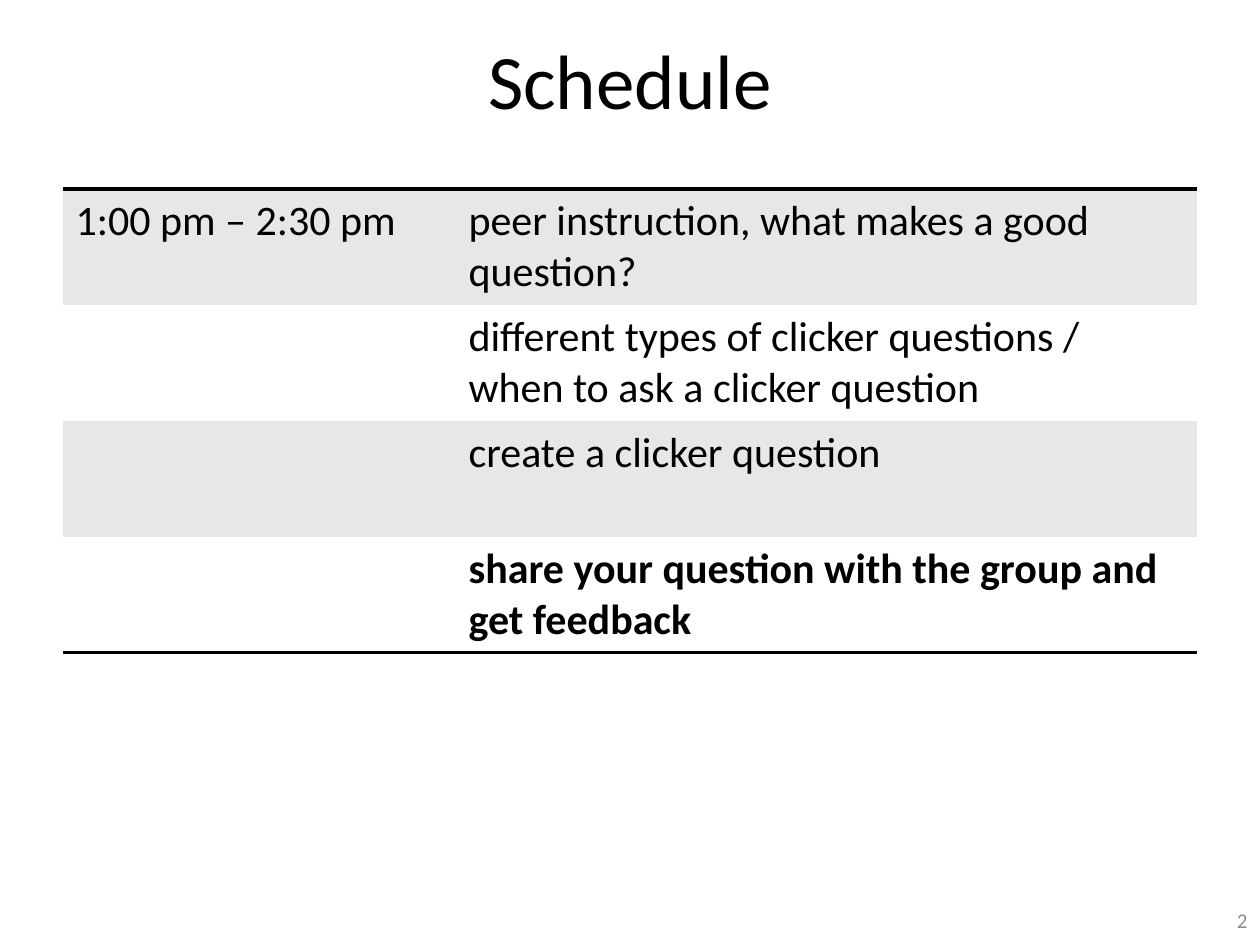
from dataclasses import dataclass

from lxml.etree import SubElement
from pptx import Presentation
from pptx.dml.color import RGBColor
from pptx.enum.text import MSO_ANCHOR, PP_ALIGN
from pptx.oxml import parse_xml
from pptx.oxml.ns import qn
from pptx.util import Emu, Pt

PIXELS_PER_INCH = 126
FONT = "Calibri"
BLACK, GRAY, BAND, WHITE = "000000", "8C8C8C", "E7E7E7", "FFFFFF"
NO_STYLE = "{2D5ABB26-0587-4C30-8999-92F81FD0307C}"
COLUMN_WIDTHS = (393, 741)
ROW_HEIGHT = 116


@dataclass(frozen=True)
class Session:
    """One row of the schedule."""

    time: str
    activity: str
    bold: bool = False


SESSIONS = (
    Session("1:00 pm – 2:30 pm", "peer instruction, what makes a good question?"),
    Session("", "different types of clicker questions /\vwhen to ask a clicker question"),
    Session("", "create a clicker question"),
    Session("", "share your question with the group and get feedback", bold=True),
)


def px(length: int) -> Emu:
    """Turn pixels into EMU."""
    return Emu(round(length * 914400 / PIXELS_PER_INCH))


def color(value: str) -> RGBColor:
    """Turn a hex string into a colour."""
    return RGBColor.from_string(value)


def write_text(frame, text: str, *, size: int, fill: str = BLACK, bold: bool = False,
               align=PP_ALIGN.LEFT, anchor=MSO_ANCHOR.TOP) -> None:
    """Write one formatted paragraph into a text frame."""
    frame.word_wrap = True
    frame.vertical_anchor = anchor
    paragraph = frame.paragraphs[0]
    paragraph.text = text
    paragraph.alignment = align
    for run in paragraph.runs:
        run.font.name = FONT
        run.font.size = Pt(size)
        run.font.bold = bold
        run.font.color.rgb = color(fill)


def add_rule(cell, side: str) -> None:
    """Draw a black border on the given side of a cell."""
    namespace = "http://schemas.openxmlformats.org/drawingml/2006/main"
    line = parse_xml(f'<a:{side} xmlns:a="{namespace}" w="{Pt(2)}"/>')
    fill = SubElement(line, qn("a:solidFill"))
    SubElement(fill, qn("a:srgbClr"), val=BLACK)
    cell._tc.get_or_add_tcPr().insert(0, line)


def add_title(slide, text: str) -> None:
    """Place the slide title."""
    title = slide.shapes.title
    title.left, title.top, title.width, title.height = px(63), px(0), px(1134), px(158)
    write_text(title.text_frame, text, size=44, align=PP_ALIGN.CENTER,
               anchor=MSO_ANCHOR.MIDDLE)


def add_schedule(slide, sessions: tuple[Session, ...]) -> None:
    """Add the banded schedule table, ruled above and below."""
    table = slide.shapes.add_table(
        len(sessions), len(COLUMN_WIDTHS), px(63), px(189),
        px(sum(COLUMN_WIDTHS)), px(ROW_HEIGHT * len(sessions))).table
    table.first_row = table.horz_banding = False
    table._tbl.tblPr.find(qn("a:tableStyleId")).text = NO_STYLE
    for column, width in zip(table.columns, COLUMN_WIDTHS):
        column.width = px(width)
    for index, session in enumerate(sessions):
        table.rows[index].height = px(ROW_HEIGHT)
        for cell, text in zip(table.rows[index].cells, (session.time, session.activity)):
            cell.fill.solid()
            cell.fill.fore_color.rgb = color(WHITE if index % 2 else BAND)
            write_text(cell.text_frame, text, size=24, bold=session.bold)
            if index == 0:
                add_rule(cell, "lnT")
            if index == len(sessions) - 1:
                add_rule(cell, "lnB")


def add_page_number(slide, number: int) -> None:
    """Add the page number at the bottom right."""
    box = slide.shapes.add_textbox(px(966), px(895), px(294), px(50))
    write_text(box.text_frame, str(number), size=12, fill=GRAY,
               align=PP_ALIGN.RIGHT, anchor=MSO_ANCHOR.MIDDLE)


def main() -> None:
    """Build and save the schedule slide."""
    presentation = Presentation()
    presentation.slide_width, presentation.slide_height = px(1260), px(945)
    slide = presentation.slides.add_slide(presentation.slide_layouts[5])
    add_title(slide, "Schedule")
    add_schedule(slide, SESSIONS)
    add_page_number(slide, 2)
    presentation.save("out.pptx")


if __name__ == "__main__":
    main()
